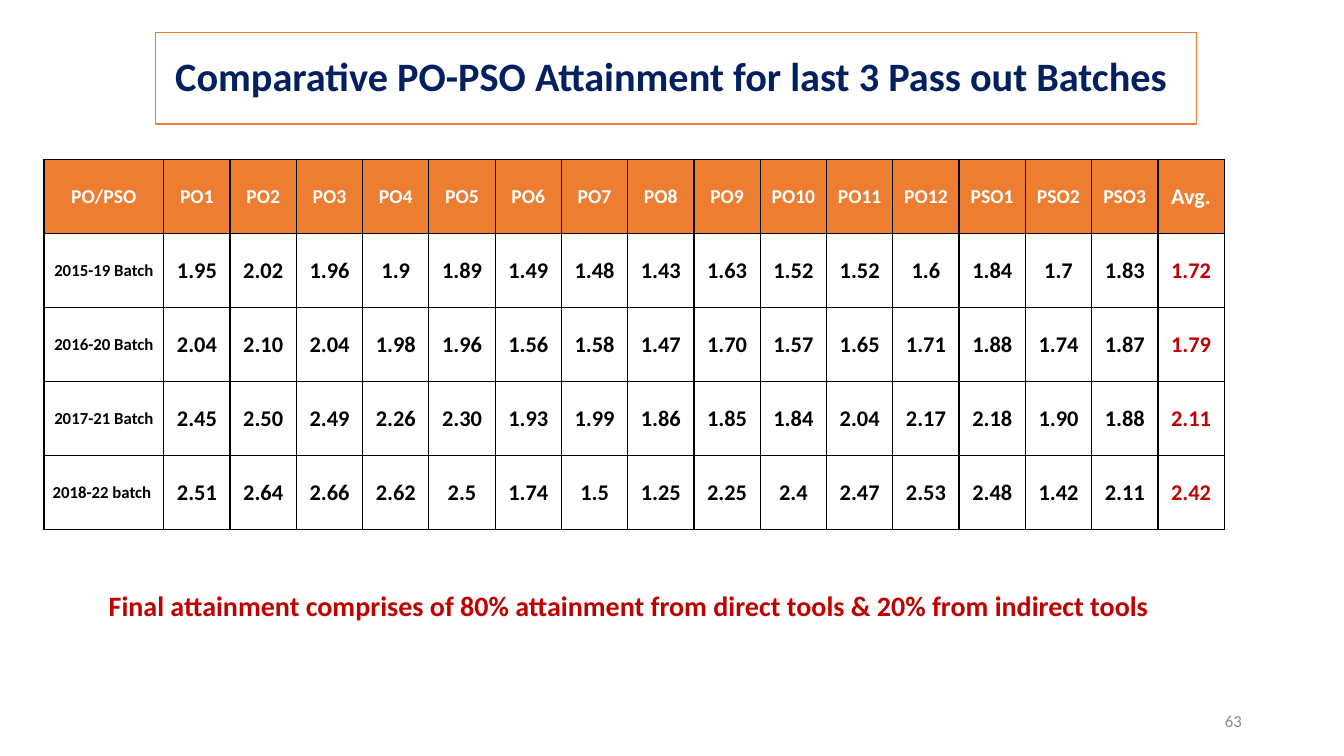
from dataclasses import dataclass

from lxml import etree
from pptx import Presentation
from pptx.dml.color import RGBColor
from pptx.enum.shapes import MSO_SHAPE
from pptx.enum.text import MSO_ANCHOR, PP_ALIGN
from pptx.oxml.ns import qn
from pptx.slide import Slide
from pptx.table import _Cell
from pptx.text.text import TextFrame
from pptx.util import Emu, Inches, Pt

LEFT, CENTER, RIGHT = PP_ALIGN.LEFT, PP_ALIGN.CENTER, PP_ALIGN.RIGHT
TOP, MIDDLE = MSO_ANCHOR.TOP, MSO_ANCHOR.MIDDLE
RECTANGLE = MSO_SHAPE.RECTANGLE

SLIDE_WIDTH, SLIDE_HEIGHT = Inches(13.333), Inches(7.5)


@dataclass(frozen=True)
class Theme:
    font: str = "Calibri"
    white: str = "FFFFFF"
    black: str = "000000"
    navy: str = "002060"
    orange: str = "ED7D31"
    red: str = "C00000"
    grey: str = "888888"
    title_size: float = 28.8
    note_size: float = 20
    value_size: float = 16
    header_size: float = 14
    small_size: float = 12
    line_width: float = 1


@dataclass(frozen=True)
class Area:
    """Left, top, width and height in percent of the slide."""
    left: float
    top: float
    width: float
    height: float

    def emu(self) -> tuple[Emu, Emu, Emu, Emu]:
        return (across(self.left), down(self.top),
                across(self.width), down(self.height))


@dataclass(frozen=True)
class Batch:
    name: str
    values: str
    average: str


THEME = Theme()
TITLE_AREA = Area(11.55, 4.27, 77.48, 12.13)
TABLE_AREA = Area(3.27, 21.07, 87.83, 49)
NOTE_AREA = Area(7.35, 77.2, 82.5, 5.87)
NUMBER_AREA = Area(70.65, 92.67, 22.5, 5.33)
NAME_COLUMN = 8.92

# Left, top, right and bottom insets in inches
BOX_INSETS = (0.1, 0.05, 0.1, 0.05)
LABEL_INSETS = (0.06, 0, 0.06, 0)
VALUE_INSETS = (0.01, 0.01, 0.01, 0)
LABEL_SPACING = 1.07

OUTCOMES = ([f"PO{number}" for number in range(1, 13)]
            + [f"PSO{number}" for number in range(1, 4)])
BATCHES = [
    Batch("2015-19 Batch", "1.95 2.02 1.96 1.9 1.89 1.49 1.48 1.43 "
          "1.63 1.52 1.52 1.6 1.84 1.7 1.83", "1.72"),
    Batch("2016-20 Batch", "2.04 2.10 2.04 1.98 1.96 1.56 1.58 1.47 "
          "1.70 1.57 1.65 1.71 1.88 1.74 1.87", "1.79"),
    Batch("2017-21 Batch", "2.45 2.50 2.49 2.26 2.30 1.93 1.99 1.86 "
          "1.85 1.84 2.04 2.17 2.18 1.90 1.88", "2.11"),
    Batch("2018-22 batch ", "2.51 2.64 2.66 2.62 2.5 1.74 1.5 1.25 "
          "2.25 2.4 2.47 2.53 2.48 1.42 2.11", "2.42"),
]


def across(percent: float) -> Emu:
    return Emu(round(SLIDE_WIDTH * percent / 100))


def down(percent: float) -> Emu:
    return Emu(round(SLIDE_HEIGHT * percent / 100))


def write(frame: TextFrame, text: str, *, size: float, color: str,
          bold: bool = True, align: PP_ALIGN = CENTER,
          spacing: float = 1) -> None:
    para = frame.paragraphs[0]
    para.alignment = align
    para.line_spacing = spacing
    span = para.add_run()
    span.text = text
    span.font.name = THEME.font
    span.font.size = Pt(size)
    span.font.bold = bold
    span.font.color.rgb = RGBColor.from_string(color)


def set_insets(holder: TextFrame | _Cell,
               insets: tuple[float, float, float, float]) -> None:
    (holder.margin_left, holder.margin_top,
     holder.margin_right, holder.margin_bottom) = map(Inches, insets)


def prepare_frame(frame: TextFrame, anchor: MSO_ANCHOR) -> None:
    frame.word_wrap = True
    frame.vertical_anchor = anchor
    set_insets(frame, BOX_INSETS)


def add_title(page: Slide, text: str) -> None:
    box = page.shapes.add_shape(RECTANGLE, *TITLE_AREA.emu())
    box.shadow.inherit = False
    box.fill.solid()
    box.fill.fore_color.rgb = RGBColor.from_string(THEME.white)
    box.line.color.rgb = RGBColor.from_string(THEME.orange)
    box.line.width = Pt(THEME.line_width)
    prepare_frame(box.text_frame, MIDDLE)
    write(box.text_frame, text, size=THEME.title_size, color=THEME.navy,
          spacing=0.9)


def add_text(page: Slide, area: Area, text: str, *, anchor: MSO_ANCHOR,
             **text_format) -> None:
    box = page.shapes.add_textbox(*area.emu())
    prepare_frame(box.text_frame, anchor)
    write(box.text_frame, text, **text_format)


def add_borders(cell: _Cell) -> None:
    properties = cell._tc.get_or_add_tcPr()
    for side in ("a:lnL", "a:lnR", "a:lnT", "a:lnB"):
        border = etree.SubElement(properties, qn(side),
                                  w=str(Pt(THEME.line_width)))
        fill = etree.SubElement(border, qn("a:solidFill"))
        etree.SubElement(fill, qn("a:srgbClr"), val=THEME.black)


def fill_cell(cell: _Cell, text: str, *, insets: tuple = VALUE_INSETS,
              background: str | None = None, **text_format) -> None:
    cell.vertical_anchor = MIDDLE
    set_insets(cell, insets)
    add_borders(cell)
    if background:
        cell.fill.solid()
        cell.fill.fore_color.rgb = RGBColor.from_string(background)
    else:
        cell.fill.background()
    write(cell.text_frame, text, **text_format)


def add_attainment_table(page: Slide) -> None:
    headings = ["PO/PSO", *OUTCOMES, "Avg."]
    row_count, column_count = len(BATCHES) + 1, len(headings)
    table = page.shapes.add_table(row_count, column_count,
                                  *TABLE_AREA.emu()).table
    table.first_row = False
    table.horz_banding = False

    # Equal columns after the batch names, equal rows throughout
    value_column = (TABLE_AREA.width - NAME_COLUMN) / (column_count - 1)
    for index, column in enumerate(table.columns):
        column.width = across(value_column if index else NAME_COLUMN)
    for row in table.rows:
        row.height = down(TABLE_AREA.height / row_count)

    # Header row
    for index, heading in enumerate(headings):
        last = index == column_count - 1
        fill_cell(table.cell(0, index), heading, insets=LABEL_INSETS,
                  background=THEME.orange, color=THEME.white,
                  size=THEME.value_size if last else THEME.header_size,
                  spacing=LABEL_SPACING)

    # One row per batch
    for row_index, batch in enumerate(BATCHES, start=1):
        fill_cell(table.cell(row_index, 0), batch.name, insets=LABEL_INSETS,
                  size=THEME.small_size, color=THEME.black,
                  spacing=LABEL_SPACING)
        for index, value in enumerate(batch.values.split(), start=1):
            fill_cell(table.cell(row_index, index), value,
                      size=THEME.value_size, color=THEME.black)
        fill_cell(table.cell(row_index, column_count - 1), batch.average,
                  size=THEME.value_size, color=THEME.red)


def main() -> None:
    deck = Presentation()
    deck.slide_width, deck.slide_height = SLIDE_WIDTH, SLIDE_HEIGHT
    page = deck.slides.add_slide(deck.slide_layouts[6])

    add_title(page, "Comparative PO-PSO Attainment for last 3 Pass out Batches ")
    add_attainment_table(page)
    add_text(page, NOTE_AREA, "Final attainment comprises of 80% attainment "
             "from direct tools & 20% from indirect tools", anchor=TOP,
             size=THEME.note_size, color=THEME.red, align=LEFT)
    add_text(page, NUMBER_AREA, "63", anchor=MIDDLE, size=THEME.small_size,
             color=THEME.grey, bold=False, align=RIGHT)

    deck.save("out.pptx")


if __name__ == "__main__":
    main()
